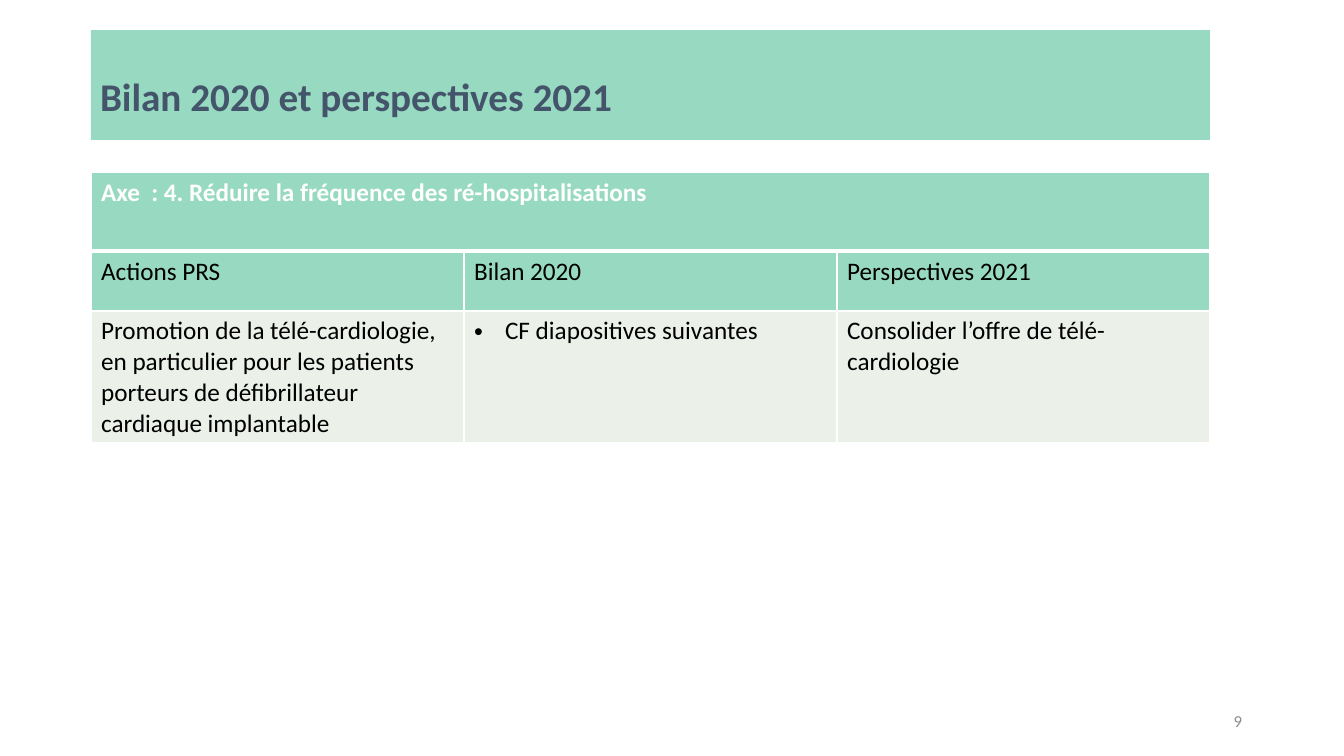
from lxml import etree
from pptx import Presentation
from pptx.dml.color import RGBColor
from pptx.enum.text import MSO_ANCHOR, MSO_AUTO_SIZE, PP_ALIGN
from pptx.oxml.ns import qn
from pptx.util import Pt

MIDDLE = MSO_ANCHOR.MIDDLE
LEFT, RIGHT = PP_ALIGN.LEFT, PP_ALIGN.RIGHT
NO_FIT = MSO_AUTO_SIZE.NONE
EMU_PER_PX = 914400 / 100.8
TITLE_ONLY = 5
COLORS = {
    "mint": "98DAC1",
    "pale": "EBF1E9",
    "slate": "44546A",
    "gray": "8C8C8C",
    "white": "FFFFFF",
    "black": "000000",
}


def px(length):
    return round(length * EMU_PER_PX)


def rgb(color):
    return RGBColor.from_string(COLORS[color])


class SlideBuilder:
    font = "Calibri"

    def __init__(self, slide):
        self.slide = slide

    def text_run(self, paragraph, text, size, color, bold=False):
        run = paragraph.add_run()
        run.text = text
        run.font.name = self.font
        run.font.size = Pt(size)
        run.font.bold = bold
        run.font.color.rgb = rgb(color)

    def title(self, text, left, top, width, height):
        banner = self.slide.shapes.title
        banner.left, banner.top = px(left), px(top)
        banner.width, banner.height = px(width), px(height)
        banner.fill.solid()
        banner.fill.fore_color.rgb = rgb("mint")
        frame = banner.text_frame
        frame.auto_size = NO_FIT
        frame.vertical_anchor = MIDDLE
        frame.margin_left = frame.margin_right = px(9)
        frame.margin_top, frame.margin_bottom = px(30), px(4)
        heading = frame.paragraphs[0]
        heading.alignment = LEFT
        heading.line_spacing = 0.93
        self.text_run(heading, text, 28, "slate", True)

    def page_number(self, text, left, top, width, height):
        box = self.slide.shapes.add_textbox(px(left), px(top), px(width), px(height))
        frame = box.text_frame
        frame.word_wrap = True
        frame.vertical_anchor = MIDDLE
        number = frame.paragraphs[0]
        number.alignment = RIGHT
        self.text_run(number, text, 12, "gray")

    def borders(self, cell, top, bottom):
        properties = cell._tc.get_or_add_tcPr()
        sides = (("L", 1), ("R", 1), ("T", top), ("B", bottom))
        for place, (side, weight) in enumerate(sides):
            line = etree.Element(qn(f"a:ln{side}"), w=str(Pt(weight)))
            fill = etree.SubElement(line, qn("a:solidFill"))
            etree.SubElement(fill, qn("a:srgbClr"), val=COLORS["white"])
            properties.insert(place, line)

    def bullet(self, paragraph, indent):
        properties = paragraph._p.get_or_add_pPr()
        properties.set("marL", str(px(indent)))
        properties.set("indent", str(-px(indent)))
        etree.SubElement(properties, qn("a:buFont"), typeface="Arial")
        etree.SubElement(properties, qn("a:buChar"), char="•")

    def table(self, rows, left, top, width, heights):
        columns = len(rows[-1]["texts"])
        frame = self.slide.shapes.add_table(
            len(rows), columns, px(left), px(top), px(width), px(sum(heights)))
        grid = frame.table
        for column in grid.columns:
            column.width = px(width // columns)
        for index, (row, height) in enumerate(zip(rows, heights)):
            grid.rows[index].height = px(height)
            texts = row["texts"]
            if len(texts) == 1:
                grid.cell(index, 0).merge(grid.cell(index, columns - 1))
            for position in range(columns):
                cell = grid.cell(index, position)
                cell.fill.solid()
                cell.fill.fore_color.rgb = rgb(row["fill"])
                self.borders(cell, 3 if index == 1 else 1, 3 if index == 0 else 1)
                if position < len(texts):
                    paragraph = cell.text_frame.paragraphs[0]
                    if position == row.get("bulleted"):
                        self.bullet(paragraph, 31)
                    self.text_run(paragraph, texts[position], 18, row["color"], index == 0)


def main():
    deck = Presentation()
    deck.slide_width, deck.slide_height = px(1344), px(756)
    builder = SlideBuilder(deck.slides.add_slide(deck.slide_layouts[TITLE_ONLY]))
    builder.title("Bilan 2020 et perspectives 2021", 91, 30, 1119, 110)
    builder.page_number("9", 950, 701, 302, 40)
    axis_rows = [
        {"texts": ["Axe  : 4. Réduire la fréquence des ré-hospitalisations"],
         "fill": "mint", "color": "white"},
        {"texts": ["Actions PRS", "Bilan 2020", "Perspectives 2021"],
         "fill": "mint", "color": "black"},
        {"texts": ["Promotion de la télé-cardiologie, en particulier pour les patients "
                   "porteurs de défibrillateur cardiaque implantable",
                   "CF diapositives suivantes",
                   "Consolider l’offre de télé-cardiologie"],
         "fill": "pale", "color": "black", "bulleted": 1},
    ]
    builder.table(axis_rows, 91, 172, 1119, [79, 60, 132])
    deck.save("out.pptx")


if __name__ == "__main__":
    main()
